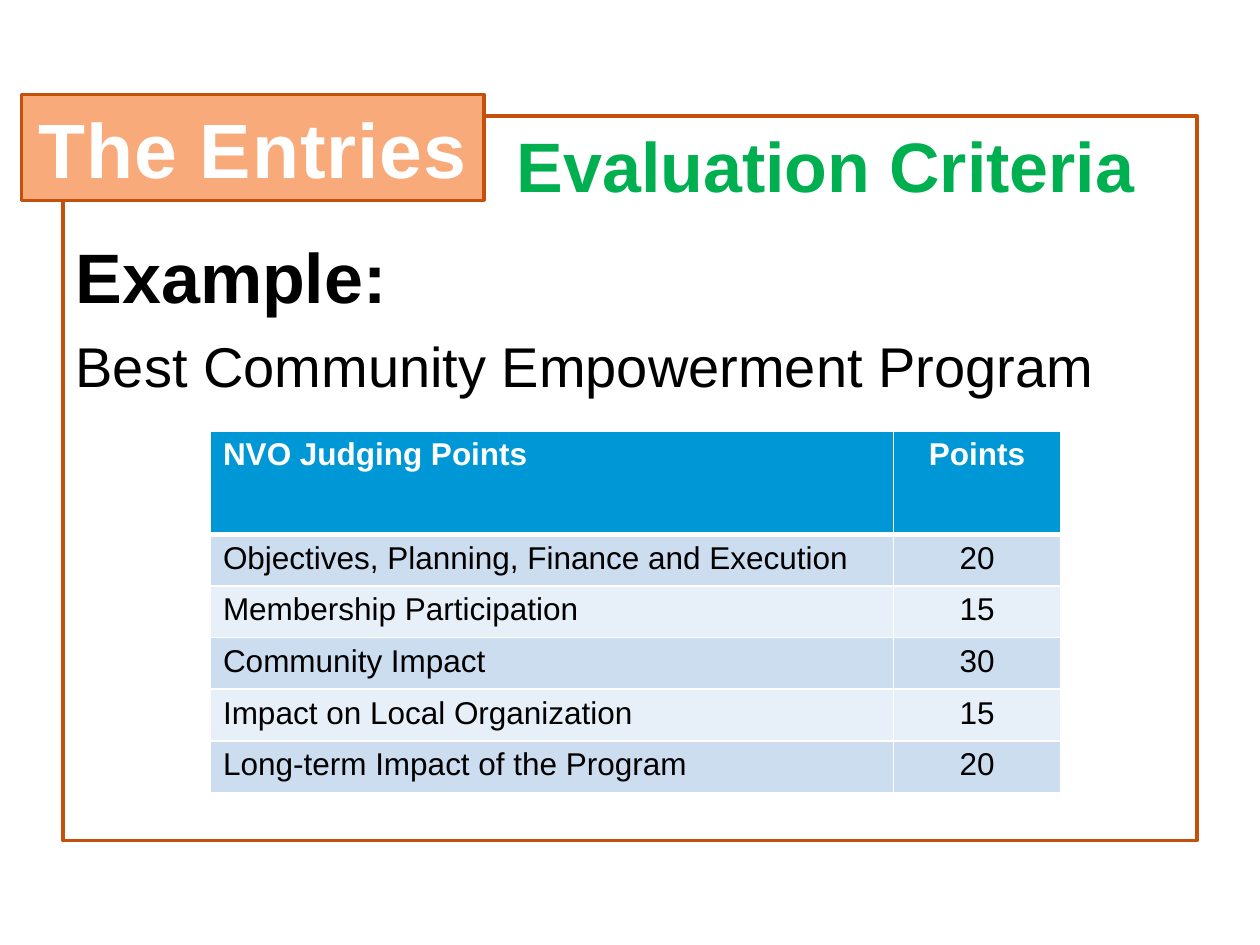
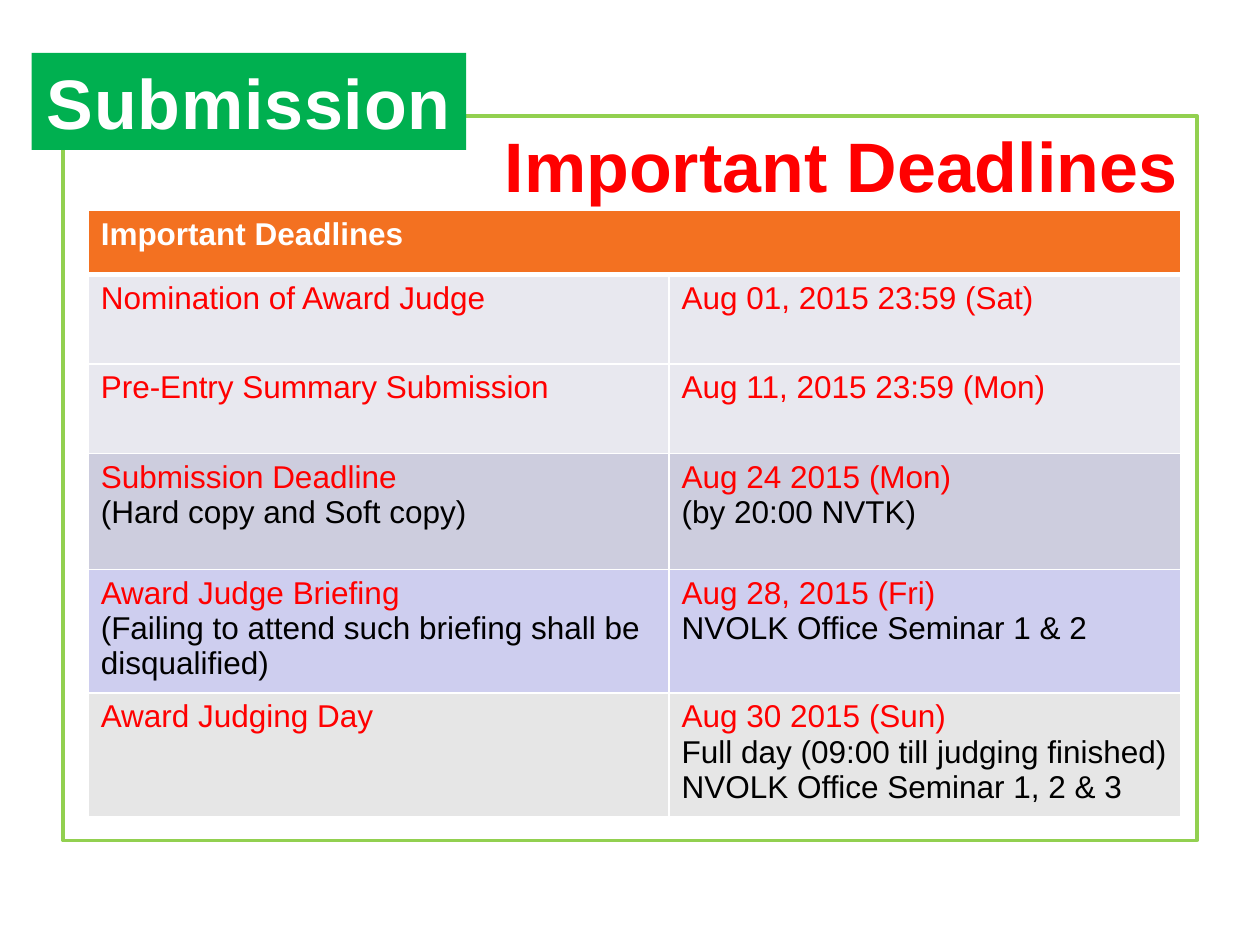
import pptx
import pptx.util
import pptx.dml.color
import pptx.enum.shapes
import pptx.enum.text
import pptx.oxml.ns
from dataclasses import dataclass
from lxml import etree

Inches, Pt = pptx.util.Inches, pptx.util.Pt
RGB = pptx.dml.color.RGBColor.from_string
qn = pptx.oxml.ns.qn
ALIGN = pptx.enum.text.PP_ALIGN
ANCHOR = pptx.enum.text.MSO_ANCHOR
NO_FIT = pptx.enum.text.MSO_AUTO_SIZE.NONE
RECT = pptx.enum.shapes.MSO_SHAPE.RECTANGLE
TITLE_AND_BODY, TITLE_ONLY = 1, 5


@dataclass(frozen=True)
class Theme:
    font: str = "Arial"
    white: str = "FFFFFF"
    black: str = "000000"
    red: str = "FF0000"
    green: str = "00B050"
    lime: str = "92D050"
    rust: str = "C4510B"
    peach: str = "F8AA7A"
    orange: str = "F37121"
    blue: str = "0097D7"
    blue_bands: tuple = ("CCDDF0", "E7EFF8")
    deadline_rows: tuple = ("E8E8EF", "E8E8EF", "CDCDDE", "CECEEF", "E6E6E6")
    title_size: int = 40
    entry_size: int = 32
    table_size: int = 18
    line: int = 2


class Deck:
    def __init__(self, theme):
        self.theme = theme
        self.prs = pptx.Presentation()
        self.prs.slide_width, self.prs.slide_height = Inches(10), Inches(7.5)
        self.slide = None

    def new_slide(self, layout):
        self.slide = self.prs.slides.add_slide(self.prs.slide_layouts[layout])

    def run(self, p, text, size, color, bold=False):
        r = p.add_run()
        r.text = text
        r.font.name, r.font.size, r.font.bold = self.theme.font, Pt(size), bold
        r.font.color.rgb = RGB(color)
        return r

    def place(self, sp, left, top, width, height):
        sp.left, sp.top = Inches(left), Inches(top)
        sp.width, sp.height = Inches(width), Inches(height)

    def rectangle(self, box, fill, line=None):
        sp = self.slide.shapes.add_shape(RECT, *map(Inches, box))
        sp.shadow.inherit = False
        sp.fill.solid()
        sp.fill.fore_color.rgb = RGB(fill)
        if line:
            sp.line.color.rgb = RGB(line)
            sp.line.width = Pt(self.theme.line)
        else:
            sp.line.fill.background()
        return sp

    def frame(self, line):
        """Translucent outlined panel behind everything else on the slide."""
        sp = self.rectangle((0.5, 0.92, 9, 5.75), self.theme.white, line)
        color = sp._element.spPr.find(qn("a:solidFill"))[0]
        etree.SubElement(color, qn("a:alpha"), val="75000")
        self.slide.shapes._spTree.insert(2, sp._element)

    def tag(self, text, box, size, fill, line=None):
        sp = self.rectangle(box, fill, line)
        tf = sp.text_frame
        tf.word_wrap = False
        tf.vertical_anchor = ANCHOR.MIDDLE
        p = tf.paragraphs[0]
        p.alignment = ALIGN.CENTER
        r = self.run(p, text, size, self.theme.white, True)
        r._r.get_or_add_rPr().set("spc", "50")

    def title(self, text, box, color, align):
        sp = self.slide.shapes.title
        self.place(sp, *box)
        tf = sp.text_frame
        tf.auto_size, tf.vertical_anchor = NO_FIT, ANCHOR.TOP
        p = tf.paragraphs[0]
        p.alignment = align
        self.run(p, text, self.theme.title_size, color, True)

    def body(self, lines, box):
        """Unbulleted list from (text, size, bold) lines."""
        sp = self.slide.placeholders[1]
        self.place(sp, *box)
        tf = sp.text_frame
        tf.auto_size = NO_FIT
        for i, (text, size, bold) in enumerate(lines):
            p = tf.add_paragraph() if i else tf.paragraphs[0]
            pPr = p._p.get_or_add_pPr()
            pPr.set("marL", str(Inches(0.38)))
            pPr.set("indent", str(-Inches(0.38)))
            etree.SubElement(pPr, qn("a:buNone"))
            p.space_before = Pt(8 if i else 0)
            self.run(p, text, size, self.theme.black, bold)

    def borders(self, cell, top, bottom):
        tcPr = cell._tc.get_or_add_tcPr()
        for side, width in (("L", 1), ("R", 1), ("T", top), ("B", bottom)):
            ln = etree.SubElement(tcPr, qn(f"a:ln{side}"), w=str(Pt(width)))
            fill = etree.SubElement(ln, qn("a:solidFill"))
            etree.SubElement(fill, qn("a:srgbClr"), val=self.theme.white)

    def cell(self, cell, lines, fill, colors, bold, align):
        """Fill a cell; the first line takes colors[0], later lines colors[1]."""
        cell.fill.solid()
        cell.fill.fore_color.rgb = RGB(fill)
        tf = cell.text_frame
        for i, text in enumerate(lines):
            p = tf.add_paragraph() if i else tf.paragraphs[0]
            p.alignment = align
            self.run(p, text, self.theme.table_size, colors[min(i, 1)], bold)

    def table(self, rows, origin, widths, heights, fills, colors, aligns):
        """Table with a header row; a header shorter than the rows spans them."""
        box = (*origin, sum(widths), sum(heights))
        table = self.slide.shapes.add_table(
            len(rows), len(widths), *map(Inches, box)).table
        table.horz_banding = False
        for column, width in zip(table.columns, widths):
            column.width = Inches(width)
        for row, height in zip(table.rows, heights):
            row.height = Inches(height)
        for i in range(len(rows)):
            for j in range(len(widths)):
                self.borders(table.cell(i, j), 3 if i == 1 else 1, 1 if i else 3)
        if len(rows[0]) < len(widths):
            table.cell(0, 0).merge(table.cell(0, len(widths) - 1))
        for i, row in enumerate(rows):
            for j, text in enumerate(row):
                self.cell(table.cell(i, j), text.split("\n"), fills[i],
                          colors if i else (self.theme.white,) * 2,
                          i == 0, aligns[j])


JUDGING_POINTS = [
    ("NVO Judging Points", "Points"),
    ("Objectives, Planning, Finance and Execution", "20"),
    ("Membership Participation", "15"),
    ("Community Impact", "30"),
    ("Impact on Local Organization", "15"),
    ("Long-term Impact of the Program", "20"),
]

DEADLINES = [
    ("Important Deadlines",),
    ("Nomination of Award Judge", "Aug 01, 2015 23:59 (Sat)"),
    ("Pre-Entry Summary Submission", "Aug 11, 2015 23:59 (Mon)"),
    ("Submission Deadline\n(Hard copy and Soft copy)",
     "Aug 24 2015 (Mon)\n(by 20:00 NVTK)"),
    ("Award Judge Briefing\n"
     "(Failing to attend such briefing shall be disqualified)",
     "Aug 28, 2015 (Fri)\nNVOLK Office Seminar 1 & 2"),
    ("Award Judging Day",
     "Aug 30 2015 (Sun)\nFull day (09:00 till judging finished)\n"
     "NVOLK Office Seminar 1, 2 & 3"),
]


def evaluation_slide(deck):
    t = deck.theme
    deck.new_slide(TITLE_AND_BODY)
    deck.frame(t.rust)
    deck.tag("The Entries", (0.17, 0.75, 3.67, 0.84), 44, t.peach, t.rust)
    deck.title("Evaluation Criteria", (4, 0.92, 5.42, 0.77), t.green, ALIGN.LEFT)
    deck.body([("Example:", t.title_size, True),
               ("Best Community Empowerment Program", t.entry_size, False)],
              (0.5, 1.8, 9, 4.9))
    bands = [t.blue_bands[i % 2] for i in range(len(JUDGING_POINTS) - 1)]
    deck.table(JUDGING_POINTS, (1.67, 3.42), (5.42, 1.33),
               [0.82] + [0.41] * len(bands), [t.blue] + bands,
               (t.black, t.black), (ALIGN.LEFT, ALIGN.CENTER))


def deadlines_slide(deck):
    t = deck.theme
    deck.new_slide(TITLE_ONLY)
    deck.frame(t.lime)
    deck.title("Important Deadlines", (3.84, 0.92, 5.67, 0.77), t.red,
               ALIGN.CENTER)
    deck.table(DEADLINES, (0.7, 1.67), (4.61, 4.06),
               (0.51, 0.71, 0.71, 0.92, 0.98, 0.98),
               (t.orange, *t.deadline_rows), (t.red, t.black),
               (ALIGN.LEFT, ALIGN.LEFT))
    deck.tag("Submission", (0.25, 0.42, 3.45, 0.77), t.title_size, t.green)


def main():
    deck = Deck(Theme())
    evaluation_slide(deck)
    deadlines_slide(deck)
    deck.prs.save("out.pptx")


if __name__ == "__main__":
    main()
